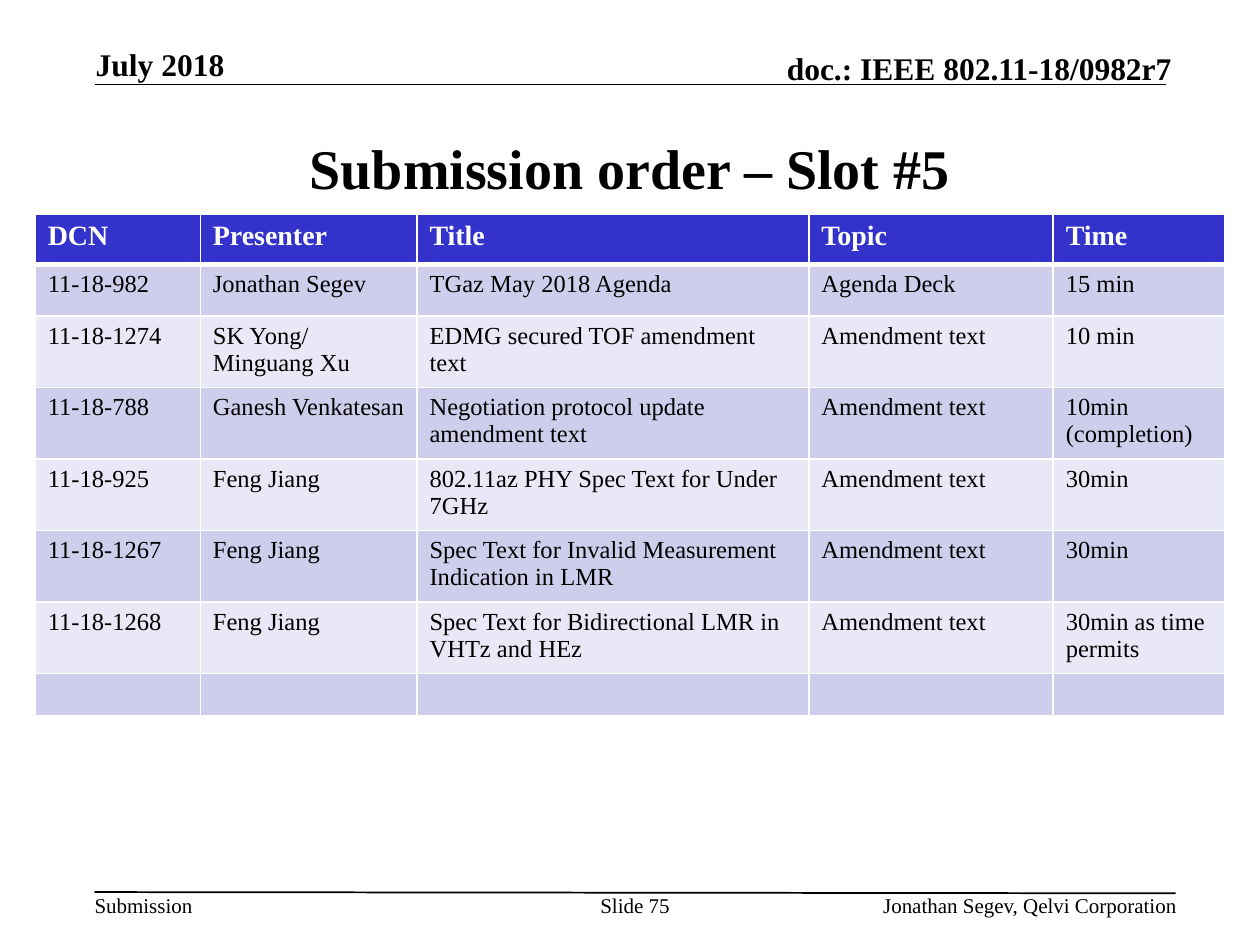
from lxml.etree import SubElement
from pptx import Presentation
from pptx.dml.color import RGBColor
from pptx.enum.shapes import MSO_CONNECTOR
from pptx.enum.text import MSO_ANCHOR, PP_ALIGN
from pptx.oxml.ns import qn
from pptx.util import Inches, Pt

COLORS = {
    "ink": "000000",
    "paper": "FFFFFF",
    "header": "3333CC",
    "odd_row": "CECEEC",
    "even_row": "E8E8F6",
}
FONT = "Times New Roman"
COLUMN_WIDTHS = [1.31, 1.72, 3.11, 1.94, 1.36]
ROW_HEIGHTS = [0.4, 0.41] + [0.53] * 5 + [0.31]
SUBMISSIONS = [
    ("DCN", "Presenter", "Title", "Topic", "Time"),
    ("11-18-982", "Jonathan Segev", "TGaz May 2018 Agenda", "Agenda Deck", "15 min"),
    ("11-18-1274", "SK Yong/\nMinguang Xu", "EDMG secured TOF amendment text",
     "Amendment text", "10 min"),
    ("11-18-788", "Ganesh Venkatesan", "Negotiation protocol update amendment text",
     "Amendment text", "10min (completion)"),
    ("11-18-925", "Feng Jiang", "802.11az PHY Spec Text for Under 7GHz",
     "Amendment text", "30min"),
    ("11-18-1267", "Feng Jiang", "Spec Text for Invalid Measurement Indication in LMR",
     "Amendment text", "30min"),
    ("11-18-1268", "Feng Jiang", "Spec Text for Bidirectional LMR in VHTz and HEz",
     "Amendment text", "30min as time permits"),
    ("",) * 5,
]


def color(name):
    """Return the named colour."""
    return RGBColor.from_string(COLORS[name])


def format_text(frame, size, bold=False, ink="ink", align=PP_ALIGN.LEFT):
    """Format every paragraph and run of a text frame."""
    font_format = {"name": FONT, "size": Pt(size), "bold": bold}
    for paragraph in frame.paragraphs:
        paragraph.alignment = align
        for run in paragraph.runs:
            for attribute, value in font_format.items():
                setattr(run.font, attribute, value)
            run.font.color.rgb = color(ink)


def add_label(slide, box, text, size, bold=False, align=PP_ALIGN.LEFT,
              anchor=MSO_ANCHOR.TOP, wrap=True):
    """Add a text box without insets in the given box."""
    frame = slide.shapes.add_textbox(*map(Inches, box)).text_frame
    frame_format = {
        "text": text, "word_wrap": wrap, "vertical_anchor": anchor,
        "margin_left": 0, "margin_top": 0, "margin_right": 0, "margin_bottom": 0,
    }
    for attribute, value in frame_format.items():
        setattr(frame, attribute, value)
    format_text(frame, size, bold, align=align)


def add_rule(slide, start, end):
    """Add a thin line between two points."""
    rule = slide.shapes.add_connector(
        MSO_CONNECTOR.STRAIGHT, *map(Inches, start + end))
    rule.line.color.rgb = color("ink")
    rule.line.width = Pt(1)
    SubElement(rule.element.spPr, qn("a:effectLst"))


def add_header(slide, left, top, width, height):
    """Add the date, the document number and the rule under them."""
    bottom = top + height
    add_rule(slide, (left, bottom), (left + width, bottom))
    add_label(slide, (left + 0.01, top, 2.05, 0.3), "July 2018", 18, True,
              anchor=MSO_ANCHOR.BOTTOM)
    add_label(slide, (left + width - 3.78, top + 0.03, 3.83, 0.3),
              "doc.: IEEE 802.11-18/0982r7", 18, True,
              PP_ALIGN.RIGHT, MSO_ANCHOR.BOTTOM)


def add_footer(slide, left, top, width):
    """Add the rule and the three labels at the foot of the slide."""
    right = left + width
    add_rule(slide, (left, top), (right, top + 0.01))
    add_label(slide, (left, top, 0.78, 0.2), "Submission", 12, wrap=False)
    add_label(slide, (left + 4, top, 0.58, 0.4), "Slide 75", 12,
              align=PP_ALIGN.CENTER, wrap=False)
    add_label(slide, (right - 3.47, top, 3.48, 0.2),
              "Jonathan Segev, Qelvi Corporation", 12, align=PP_ALIGN.RIGHT)


def add_title(slide, left, top, width, height):
    """Place the title placeholder in the given box."""
    title = slide.shapes.title
    box = {"left": left, "top": top, "width": width, "height": height}
    for attribute, value in box.items():
        setattr(title, attribute, Inches(value))
    title.text_frame.text = "Submission order – Slot #5"
    title.text_frame.vertical_anchor = MSO_ANCHOR.MIDDLE
    format_text(title.text_frame, 32, True, align=PP_ALIGN.CENTER)


def set_borders(cell, top, bottom):
    """Draw the cell's borders with the given top and bottom points."""
    properties = cell._tc.get_or_add_tcPr()
    for side, points in {"L": 1, "R": 1, "T": top, "B": bottom}.items():
        border = SubElement(properties, qn(f"a:ln{side}"), w=str(Pt(points)))
        fill = SubElement(border, qn("a:solidFill"))
        SubElement(fill, qn("a:srgbClr"), val=COLORS["paper"])


def add_cell(cell, row, text):
    """Fill, border and format one cell of the submission table."""
    is_header = row == 0
    set_borders(cell, 3 if row == 1 else 1, 3 if is_header else 1)
    band = "header" if is_header else "odd_row" if row % 2 else "even_row"
    cell.fill.solid()
    cell.fill.fore_color.rgb = color(band)
    size = 16 if is_header else 14
    if text:
        cell.text = text
        format_text(cell.text_frame, size, is_header,
                    "paper" if is_header else "ink")
    else:
        SubElement(cell.text_frame.paragraphs[0]._p, qn("a:endParaRPr"),
                   sz=str(size * 100))


def add_submissions(slide, left, top):
    """Add the table of submissions from the given corner."""
    table = slide.shapes.add_table(
        len(SUBMISSIONS), len(COLUMN_WIDTHS), Inches(left), Inches(top),
        Inches(sum(COLUMN_WIDTHS)), Inches(sum(ROW_HEIGHTS))).table
    for column, width in zip(table.columns, COLUMN_WIDTHS):
        column.width = Inches(width)
    for row, (submission, height) in enumerate(zip(SUBMISSIONS, ROW_HEIGHTS)):
        table.rows[row].height = Inches(height)
        for column, text in enumerate(submission):
            add_cell(table.cell(row, column), row, text)


def main():
    """Build the slide and save it."""
    deck = Presentation()
    deck.slide_width, deck.slide_height = Inches(10), Inches(7.5)
    slide = deck.slides.add_slide(deck.slide_layouts[5])
    add_header(slide, 0.75, 0.36, 8.5, 0.31)
    add_footer(slide, 0.75, 7.08, 8.58)
    add_title(slide, 0.75, 0.75, 8.5, 1.16)
    add_submissions(slide, 0.28, 1.7)
    deck.save("out.pptx")


if __name__ == "__main__":
    main()
